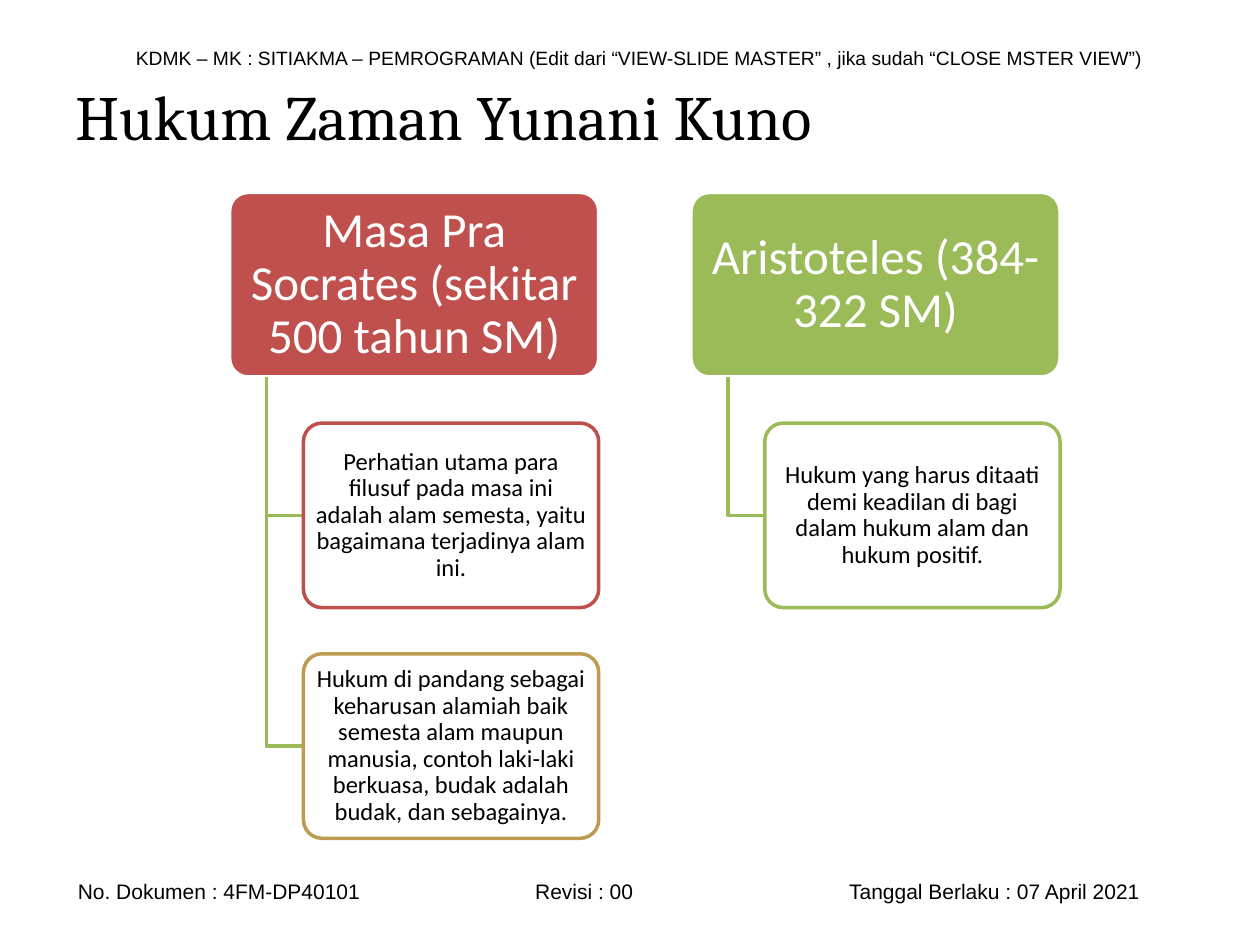
from dataclasses import dataclass

from lxml.etree import SubElement as Sub
from pptx import Presentation
from pptx.dml.color import RGBColor
from pptx.enum.shapes import MSO_SHAPE as Shape
from pptx.enum.text import MSO_ANCHOR as Anchor, PP_ALIGN as Align
from pptx.oxml.ns import qn
from pptx.util import Cm, Pt

BLACK = RGBColor(0x00, 0x00, 0x00)
WHITE = RGBColor(0xFF, 0xFF, 0xFF)
RED = RGBColor(0xC0, 0x50, 0x4D)
GREEN = RGBColor(0x9B, 0xBB, 0x59)
GOLD = RGBColor(0xBD, 0x9B, 0x53)

# Tree grid in cm: every gap and indent is a share of the head box
LEFT, TOP = 4.63, 3.88
WIDE, HIGH = 7.44, 3.72
STEP = 1.25


@dataclass
class Note:
    text: str
    edge: RGBColor


@dataclass
class Branch:
    head: str
    fill: RGBColor
    notes: list[Note]


BRANCHES = [
    Branch("Masa Pra Socrates (sekitar 500 tahun SM)", RED, [
        Note("Perhatian utama para filusuf pada masa ini adalah alam semesta, "
             "yaitu bagaimana terjadinya alam ini.", RED),
        Note("Hukum di pandang sebagai keharusan alamiah baik semesta alam "
             "maupun manusia, contoh laki-laki berkuasa, budak adalah budak, "
             "dan sebagainya.", GOLD),
    ]),
    Branch("Aristoteles (384-322 SM)", GREEN, [
        Note("Hukum yang harus ditaati demi keadilan di bagi dalam hukum alam "
             "dan hukum positif.", GREEN),
    ]),
]


def write(shape, text: str, *, size: float, font: str, color=BLACK,
          align=Align.JUSTIFY, pad=(0.25, 0.13), space=1.0, tabs=()) -> None:
    """Fill a shape with one paragraph; pad is (side, top) in cm."""
    frame = shape.text_frame
    frame.word_wrap = True
    frame.vertical_anchor = Anchor.MIDDLE
    frame.margin_left = frame.margin_right = Cm(pad[0])
    frame.margin_top = frame.margin_bottom = Cm(pad[1])
    para = frame.paragraphs[0]
    para.alignment = align
    para.line_spacing = space
    if tabs:
        stops = Sub(para._p.get_or_add_pPr(), qn("a:tabLst"))
        for stop in tabs:
            Sub(stops, qn("a:tab"), pos=str(Cm(stop)), algn="l")
    run = para.add_run()
    run.text = text
    run.font.size = Pt(size)
    run.font.name = font
    run.font.color.rgb = color


def label(slide, left: float, top: float, wide: float, high: float,
          text: str, **style) -> None:
    box = slide.shapes.add_textbox(Cm(left), Cm(top), Cm(wide), Cm(high))
    write(box, text, **style)


def card(slide, left: float, top: float, wide: float, text: str, *,
         fill: RGBColor, edge: RGBColor, alpha: int = 100, **style) -> None:
    box = slide.shapes.add_shape(Shape.ROUNDED_RECTANGLE, Cm(left), Cm(top),
                                 Cm(wide), Cm(HIGH))
    box.adjustments[0] = 0.1
    box.shadow.inherit = False
    box.fill.solid()
    box.fill.fore_color.rgb = fill
    if alpha < 100:
        tint = box._element.spPr.find(qn("a:solidFill"))[0]
        Sub(tint, qn("a:alpha"), val=str(alpha * 1000))
    box.line.color.rgb = edge
    box.line.width = Pt(2)
    write(box, text, font="Calibri", align=Align.CENTER, space=0.9, **style)


def stem(slide, left: float, top: float, right: float, low: float) -> None:
    """Draw the bent line from a head down and across to a note."""
    pen = slide.shapes.build_freeform(Cm(left), Cm(top))
    pen.add_line_segments([(Cm(left), Cm(low)), (Cm(right), Cm(low))],
                          close=False)
    bend = pen.convert_to_shape()
    bend.shadow.inherit = False
    bend.fill.background()
    bend.line.color.rgb = GREEN
    bend.line.width = Pt(2)


def grow(slide, left: float, branch: Branch) -> None:
    card(slide, left, TOP, WIDE, branch.head, fill=branch.fill, edge=WHITE,
         size=28, color=WHITE, pad=(0.15, 0.1))
    inner = left + 0.2 * WIDE
    for row, note in enumerate(branch.notes, 1):
        top = TOP + row * STEP * HIGH
        stem(slide, left + 0.1 * WIDE, TOP + HIGH, inner, top + HIGH / 2)
        card(slide, inner, top, 0.8 * WIDE, note.text, fill=WHITE,
             edge=note.edge, alpha=90, size=14, pad=(0.08, 0.05))


def main() -> None:
    deck = Presentation()
    deck.slide_width, deck.slide_height = Cm(25.4), Cm(19.05)
    slide = deck.slides.add_slide(deck.slide_layouts[6])

    # Page header and footer
    label(slide, 2.49, 0.79, 21.21, 0.74,
          "KDMK – MK : SITIAKMA – PEMROGRAMAN (Edit dari “VIEW-SLIDE MASTER” , "
          "jika sudah “CLOSE MSTER VIEW”)", size=11, font="Arial")
    label(slide, 0.51, 17.58, 24, 0.76,
          "No. Dokumen : 4FM-DP40101\tRevisi : 00\t"
          "Tanggal Berlaku : 07 April 2021",
          size=12, font="Arial", pad=(1.06, 0.13), tabs=(9.22, 15.55))

    # Title
    label(slide, 1.27, 0.74, 22.86, 3.18, "Hukum Zaman Yunani Kuno",
          size=36, font="Cambria")

    # Two trees of heads and notes
    for col, branch in enumerate(BRANCHES):
        grow(slide, LEFT + col * STEP * WIDE, branch)

    deck.save("out.pptx")


if __name__ == "__main__":
    main()
